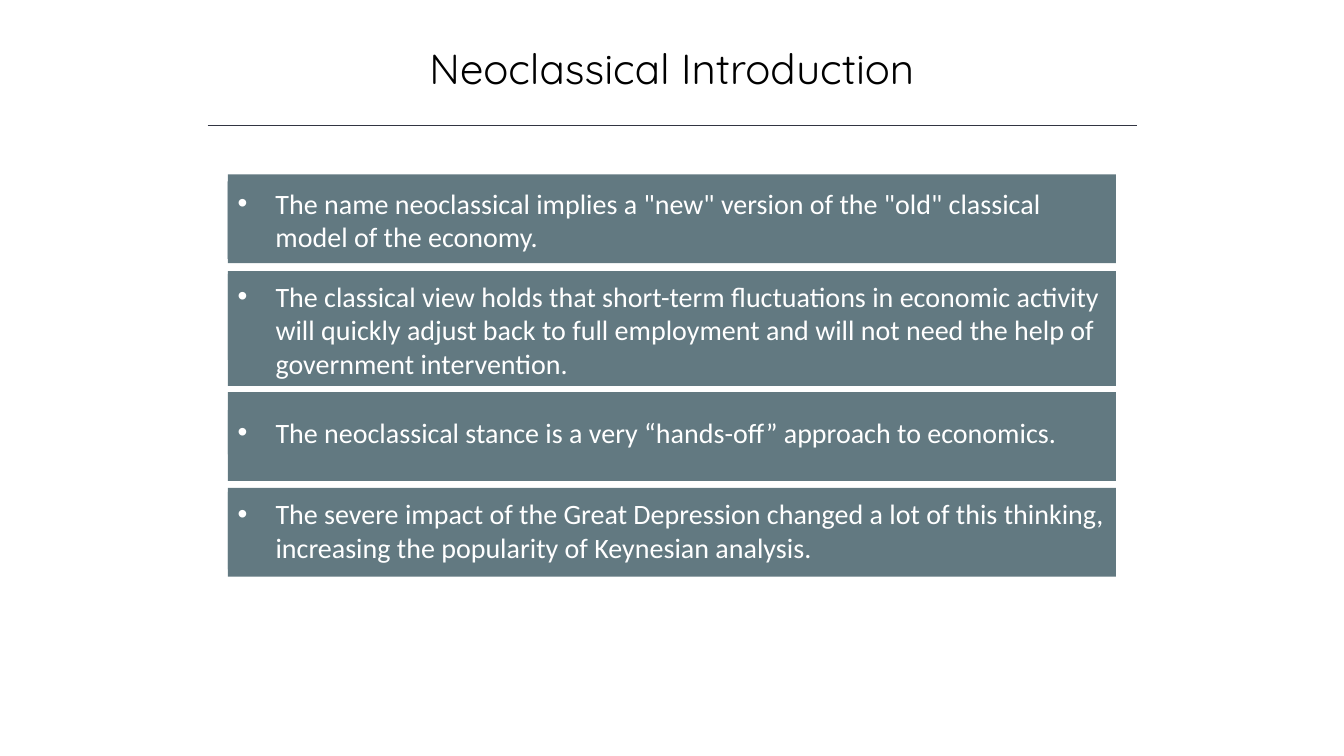
"""Build the Neoclassical Introduction slide: a ruled title over four bulleted bands."""
from lxml import etree
from pptx import Presentation
from pptx.dml.color import RGBColor
from pptx.enum.shapes import MSO_CONNECTOR, MSO_SHAPE
from pptx.enum.text import MSO_ANCHOR, MSO_AUTO_SIZE, PP_ALIGN
from pptx.oxml.ns import qn
from pptx.util import Pt

RECTANGLE = MSO_SHAPE.RECTANGLE
STRAIGHT = MSO_CONNECTOR.STRAIGHT
TOP = MSO_ANCHOR.TOP
NO_AUTOFIT = MSO_AUTO_SIZE.NONE
LEFT, CENTER = PP_ALIGN.LEFT, PP_ALIGN.CENTER

BLACK = RGBColor(0x00, 0x00, 0x00)
WHITE = RGBColor(0xFF, 0xFF, 0xFF)
SLATE = RGBColor(0x62, 0x79, 0x81)
NAVY = RGBColor(0x32, 0x35, 0x42)

BAND_LEFT, BAND_WIDTH, BAND_HEIGHT = 162.7, 634.3, 63.4
POINTS = [
    (124.6, 129.6, 615, 55.4,
     'The name neoclassical implies a "new" version of the "old" classical '
     'model of the economy.'),
    (193.7, 195.8, BAND_WIDTH, 79.9,
     "The classical view holds that short-term fluctuations in economic activity "
     "will quickly adjust back to full employment and will not need the help of "
     "government intervention."),
    (280.1, 293, 632.2, 31.7,
     "The neoclassical stance is a very “hands-off” approach to economics."),
    (348.5, 351.4, BAND_WIDTH, 55.4,
     "The severe impact of the Great Depression changed a lot of this thinking, "
     "increasing the popularity of Keynesian analysis."),
]


class BandSlide:
    """Hold the slide and its style, with one method per kind of element."""

    heading_font, heading_size = "Quicksand", 30
    point_font, point_size = "Calibri", 20
    indent = 27

    def __init__(self, deck):
        self.slide = deck.slides.add_slide(deck.slide_layouts[5])

    def add_text(self, frame, text, font, size, color, align):
        frame.word_wrap = True
        frame.auto_size = NO_AUTOFIT
        frame.vertical_anchor = TOP
        paragraph = frame.paragraphs[0]
        paragraph.alignment = align
        run = paragraph.add_run()
        run.text = text
        run.font.name, run.font.size = font, Pt(size)
        run.font.color.rgb = color
        return paragraph

    def title(self, text, left, top, width, height):
        heading = self.slide.shapes.title
        heading.left, heading.top = Pt(left), Pt(top)
        heading.width, heading.height = Pt(width), Pt(height)
        self.add_text(heading.text_frame, text, self.heading_font,
                      self.heading_size, BLACK, CENTER)

    def rule(self, left, right, y):
        rule = self.slide.shapes.add_connector(
            STRAIGHT, Pt(left), Pt(y), Pt(right), Pt(y))
        rule.line.color.rgb = NAVY
        rule.line.width = Pt(1)
        etree.SubElement(rule._element.spPr, qn("a:effectLst"))

    def band(self, left, top, width, height):
        band = self.slide.shapes.add_shape(
            RECTANGLE, Pt(left), Pt(top), Pt(width), Pt(height))
        band.shadow.inherit = False
        band.fill.solid()
        band.fill.fore_color.rgb = SLATE
        band.line.fill.background()
        return band

    def point(self, text, left, top, width, height):
        point = self.band(left, top, width, height)
        paragraph = self.add_text(point.text_frame, text, self.point_font,
                                  self.point_size, WHITE, LEFT)
        properties = paragraph._p.get_or_add_pPr()
        properties.set("marL", str(Pt(self.indent)))
        properties.set("indent", str(-Pt(self.indent)))
        etree.SubElement(properties, qn("a:buFont"), typeface="Arial")
        etree.SubElement(properties, qn("a:buChar"), char="•")


def main():
    deck = Presentation()
    deck.slide_width, deck.slide_height = Pt(960), Pt(540)
    page = BandSlide(deck)
    page.title("Neoclassical Introduction", 120, 26.6, 720, 44)
    page.rule(148.3, 812.2, 89.5)
    for band_top, text_top, text_width, text_height, text in POINTS:
        page.band(BAND_LEFT, band_top, BAND_WIDTH, BAND_HEIGHT)
        page.point(text, BAND_LEFT, text_top, text_width, text_height)
    deck.save("out.pptx")


if __name__ == "__main__":
    main()
